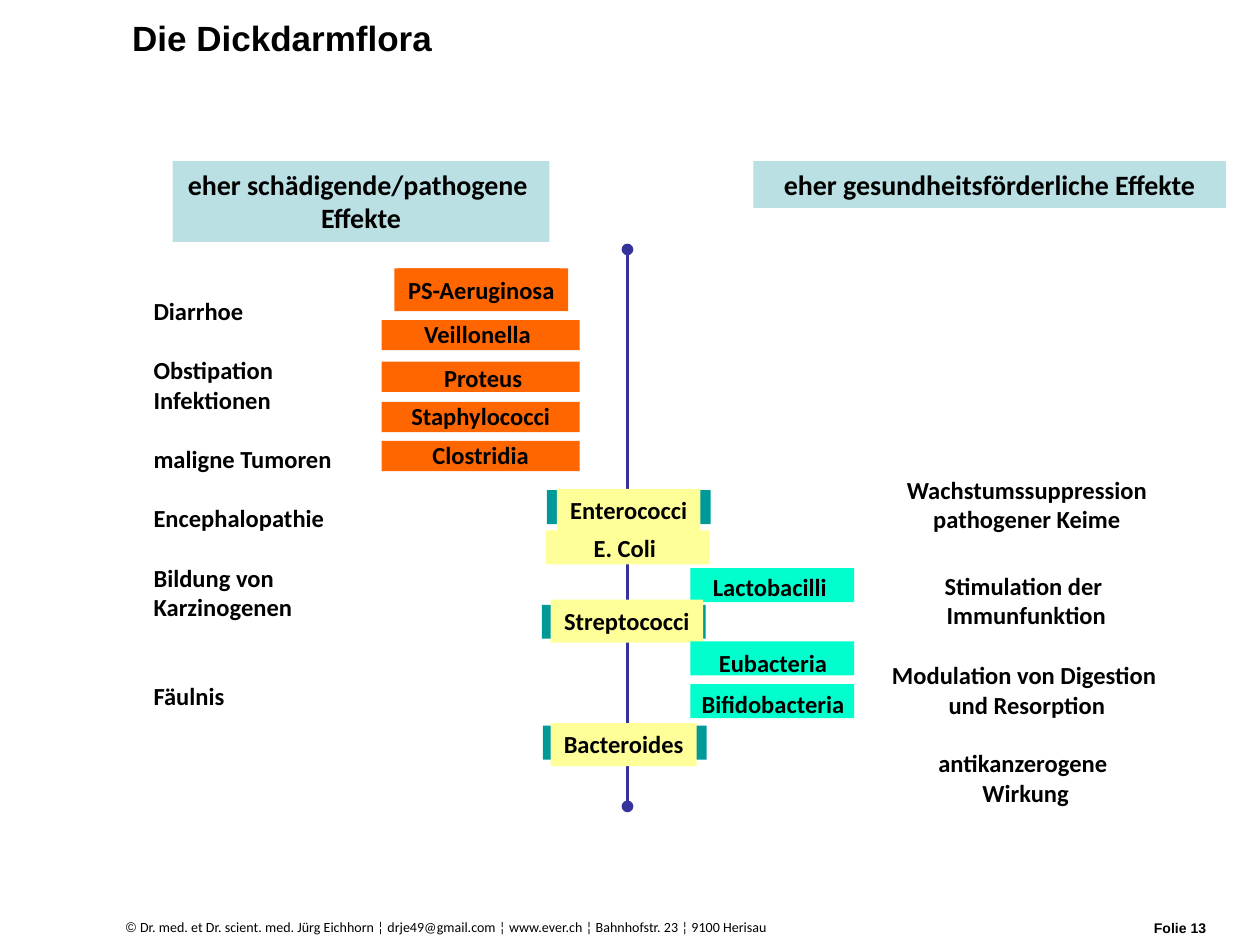
"""Builds a slide that sorts colon bacteria by harmful and beneficial effects."""
from dataclasses import dataclass
from typing import NamedTuple, Optional

from pptx import Presentation
from pptx import util as u
from pptx.dml import color
from pptx.enum import shapes, text
from pptx.oxml import ns
from lxml import etree

COLUMNS, ROWS = 100, 75


@dataclass(frozen=True)
class Theme:
    ink: str = "000000"
    heading: str = "BBE0E3"
    harmful: str = "FF6600"
    helpful: str = "00FFCC"
    mixed: str = "FFFF99"
    backing: str = "009999"
    axis: str = "333399"
    body_font: str = "Calibri"
    title_font: str = "Arial"
    title_size: float = 20
    heading_size: float = 16
    label_size: float = 14
    footer_size: float = 8
    axis_width: float = 2.25
    blank_line: float = 17.1


class Area(NamedTuple):
    column: float
    row: float
    columns: float
    rows: float


class Piece(NamedTuple):
    words: str
    font: str
    size: float
    bold: bool = True


class Line(NamedTuple):
    pieces: list[Piece]
    blanks_before: int = 0


@dataclass(frozen=True)
class Species:
    name: str
    bar: Area
    bar_fill: str
    label: Area
    label_fill: Optional[str] = None


@dataclass(frozen=True)
class Effect:
    lines: list[str]
    area: Area


THEME = Theme()
deck = Presentation()
deck.slide_width, deck.slide_height = u.Inches(10), u.Inches(7.5)
slide = deck.slides.add_slide(deck.slide_layouts[6])


def across(columns: float) -> int:
    """Turn grid columns into a length."""
    return round(deck.slide_width * columns / COLUMNS)


def down(rows: float) -> int:
    """Turn grid rows into a length."""
    return round(deck.slide_height * rows / ROWS)


def bounds(area: Area) -> tuple[int, int, int, int]:
    """Turn a grid area into left, top, width and height."""
    return across(area.column), down(area.row), across(area.columns), down(area.rows)


def draw_bar(area: Area, fill: str):
    """Draw a plain filled rectangle."""
    bar = slide.shapes.add_shape(shapes.MSO_SHAPE.RECTANGLE, *bounds(area))
    bar.shadow.inherit = False
    bar.fill.solid()
    bar.fill.fore_color.rgb = color.RGBColor.from_string(fill)
    bar.line.fill.background()
    return bar


def draw_text(area: Area, lines: list[Line], fill: Optional[str] = None,
              centred: bool = True, wrap: bool = False, middle: bool = False) -> None:
    """Write lines in a text box, or in a rectangle when a fill is given."""
    holder = draw_bar(area, fill) if fill else slide.shapes.add_textbox(*bounds(area))
    frame = holder.text_frame
    frame.word_wrap = wrap
    frame.vertical_anchor = text.MSO_ANCHOR.MIDDLE if middle else text.MSO_ANCHOR.TOP
    for index, line in enumerate(lines):
        paragraph = frame.add_paragraph() if index else frame.paragraphs[0]
        paragraph.alignment = text.PP_ALIGN.CENTER if centred else text.PP_ALIGN.LEFT
        if line.blanks_before:
            paragraph.space_before = u.Pt(line.blanks_before * THEME.blank_line)
        for piece in line.pieces:
            run = paragraph.add_run()
            run.text = piece.words
            run.font.name, run.font.size = piece.font, u.Pt(piece.size)
            run.font.bold = piece.bold
            run.font.color.rgb = color.RGBColor.from_string(THEME.ink)


def label_line(words: str, blanks_before: int = 0) -> Line:
    """Make a bold line at label size."""
    return Line([Piece(words, THEME.body_font, THEME.label_size)], blanks_before)


def heading_line(words: str) -> Line:
    """Make a bold line at heading size."""
    return Line([Piece(words, THEME.body_font, THEME.heading_size)])


def draw_axis(column: float, top: float, bottom: float) -> None:
    """Draw the vertical divider with round ends."""
    axis = slide.shapes.add_connector(shapes.MSO_CONNECTOR.STRAIGHT, across(column),
                                      down(top), across(column), down(bottom))
    axis.line.color.rgb = color.RGBColor.from_string(THEME.axis)
    axis.line.width = u.Pt(THEME.axis_width)
    for end in ("a:headEnd", "a:tailEnd"):
        etree.SubElement(axis.line._get_or_add_ln(), ns.qn(end), type="oval")
    etree.SubElement(axis._element.spPr, ns.qn("a:effectLst"))


def draw_species(species: Species) -> None:
    """Draw the bar of a species and its name on top."""
    draw_bar(species.bar, species.bar_fill)
    draw_text(species.label, [label_line(species.name)], species.label_fill)


def harmful(name: str, bar_row: float, column: float, row: float, columns: float) -> Species:
    """Describe a species on the harmful side."""
    return Species(name, Area(30.3, bar_row, 15.7, 2.4), THEME.harmful,
                   Area(column, row, columns, 3.4))


def helpful(name: str, bar_row: float, column: float, row: float, columns: float) -> Species:
    """Describe a species on the helpful side."""
    return Species(name, Area(54.8, bar_row, 13, 2.7), THEME.helpful,
                   Area(column, row, columns, 3.4))


def mixed(name: str, bar_column: float, bar_row: float, column: float, row: float,
          columns: float) -> Species:
    """Describe a species that straddles the divider."""
    return Species(name, Area(bar_column, bar_row, 13, 2.7), THEME.backing,
                   Area(column, row, columns, 3.4), THEME.mixed)


SPECIES = [
    Species("PS-Aeruginosa", Area(31.6, 21.3, 12.9, 2.7), THEME.harmful,
            Area(31.3, 21.3, 13.8, 3.4), THEME.harmful),
    harmful("Veillonella", 25.4, 32.6, 24.8, 10.6),
    harmful("Proteus", 28.7, 34.2, 28.3, 8.3),
    harmful("Staphylococci", 31.9, 31.6, 31.3, 13.1),
    harmful("Clostridia", 35, 33.3, 34.4, 9.7),
    mixed("Enterococci", 43.4, 38.9, 44.2, 38.8, 11.4),
    Species("E. Coli", Area(43.3, 42.1, 13, 2.7), THEME.mixed, Area(46.1, 41.8, 7, 3.4)),
    helpful("Lactobacilli", 45.1, 55.5, 44.9, 11.2),
    mixed("Streptococci", 43, 48, 43.7, 47.6, 12.1),
    mixed("Bacteroides", 43.1, 57.6, 43.7, 57.4, 11.6),
    helpful("Eubacteria", 50.9, 56, 50.9, 10.7),
    helpful("Bifidobacteria", 54.3, 54.6, 54.2, 13.5),
]

SYMPTOMS = [("Diarrhoe", 0), ("Obstipation", 1), ("Infektionen", 0), ("maligne Tumoren", 1),
            ("Encephalopathie", 1), ("Bildung von", 1), ("Karzinogenen", 0), ("Fäulnis", 2)]

BENEFITS = [
    Effect(["Wachstumssuppression", "pathogener Keime"], Area(70.9, 37.2, 21.2, 5.7)),
    Effect(["Stimulation der ", "Immunfunktion"], Area(73.9, 44.8, 15.1, 5.7)),
    Effect(["Modulation von Digestion ", "und Resorption"], Area(69.7, 51.9, 23.6, 5.7)),
    Effect(["antikanzerogene ", "Wirkung"], Area(73.2, 58.9, 16.4, 5.7)),
]

FOOTER = [Piece("© ", THEME.title_font, THEME.footer_size, False),
          Piece("Dr. med. et Dr. scient. med. Jürg Eichhorn ¦ drje49@gmail.com ¦ www.ever.ch"
                " ¦ Bahnhofstr. 23 ¦ 9100 Herisau", THEME.body_font, THEME.footer_size, False)]

draw_text(Area(9, 72.4, 81.1, 2.3), [Line(FOOTER)], centred=False, wrap=True)
draw_text(Area(90.6, 72.5, 9.4, 2.3),
          [Line([Piece("Folie 13", THEME.title_font, THEME.footer_size)])],
          centred=False, wrap=True)
draw_text(Area(9.5, 0.5, 64.2, 5),
          [Line([Piece("Die Dickdarmflora", THEME.title_font, THEME.title_size)])],
          centred=False, wrap=True, middle=True)
draw_text(Area(13.7, 12.8, 29.9, 6.4),
          [heading_line("eher schädigende/pathogene "), heading_line("Effekte")], THEME.heading)
draw_text(Area(59.8, 12.8, 37.5, 3.7),
          [heading_line("eher gesundheitsförderliche Effekte")], THEME.heading, wrap=True)
draw_axis(49.8, 19.8, 64)
for entry in SPECIES:
    draw_species(entry)
draw_text(Area(11.2, 23, 16.2, 34), [label_line(*symptom) for symptom in SYMPTOMS], centred=False)
for benefit in BENEFITS:
    draw_text(benefit.area, [label_line(words) for words in benefit.lines])

deck.save("out.pptx")
